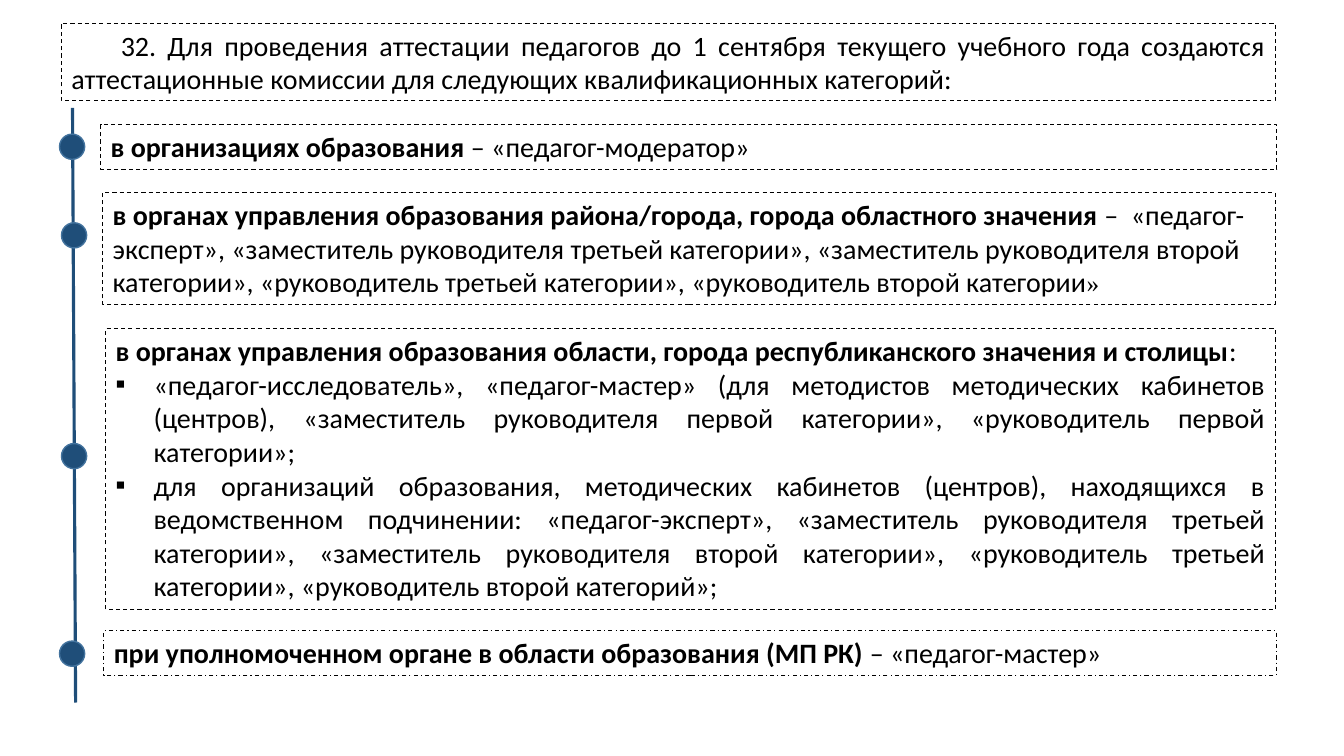
from lxml import etree
from pptx import Presentation
from pptx.dml.color import RGBColor
from pptx.enum.dml import MSO_LINE_DASH_STYLE as DASH
from pptx.enum.shapes import MSO_CONNECTOR, MSO_SHAPE
from pptx.enum.text import MSO_AUTO_SIZE, PP_ALIGN
from pptx.oxml.ns import qn
from pptx.util import Pt


def color(hex_string):
    return RGBColor.from_string(hex_string)


def add_box(left, top, width, height, paragraphs, dash=DASH.DASH):
    """Outlined text box; each paragraph is a list of (text, bold) runs."""
    sp = slide.shapes.add_textbox(Pt(left), Pt(top), Pt(width), Pt(height))
    sp.line.color.rgb = color("000000")
    sp.line.width = Pt(0.75)
    sp.line.dash_style = dash
    tf = sp.text_frame
    tf.word_wrap = True
    tf.auto_size = MSO_AUTO_SIZE.SHAPE_TO_FIT_TEXT
    for i, runs in enumerate(paragraphs):
        p = tf.add_paragraph() if i else tf.paragraphs[0]
        for text, bold in runs:
            r = p.add_run()
            r.text = text
            r.font.name = "Calibri"
            r.font.size = Pt(20)
            r.font.bold = bold
            r.font.color.rgb = color("000000")
    return tf


prs = Presentation()
prs.slide_width, prs.slide_height = Pt(960), Pt(540)
slide = prs.slides.add_slide(prs.slide_layouts[6])

# Introduction
tf = add_box(43.9, 16.6, 866.9, 55.4, [[(
    "32. Для проведения аттестации педагогов до 1 сентября текущего учебного года "
    "создаются аттестационные комиссии для следующих квалификационных категорий:", False)]])
p = tf.paragraphs[0]
p.alignment = PP_ALIGN.JUSTIFY
p._p.get_or_add_pPr().set("indent", str(Pt(35.3)))

# Timeline with a dot for each level
line = slide.shapes.add_connector(MSO_CONNECTOR.STRAIGHT, Pt(51.8), Pt(77), Pt(54), Pt(501.8))
line.line.color.rgb = color("1F4E79")
line.line.width = Pt(2.25)
etree.SubElement(line._element.spPr, qn("a:effectLst"))

for left, top in [(42.5, 95.8), (43.9, 159.1), (43.9, 316.8), (42.5, 457.9)]:
    dot = slide.shapes.add_shape(MSO_SHAPE.OVAL, Pt(left), Pt(top), Pt(18), Pt(18))
    dot.shadow.inherit = False
    dot.fill.solid()
    dot.fill.fore_color.rgb = color("1F4E79")
    dot.line.color.rgb = color("43739E")
    dot.line.width = Pt(1)

# Education organisations
add_box(72, 89.3, 840.2, 31.7, [
    [("в организациях образования ", True), ("– «педагог-модератор»", False)]])

# District and city authorities
tf = add_box(73.4, 137.5, 837.4, 79.9, [[
    ("в органах управления образования района/города, города областного значения ", True),
    ("–  «педагог-эксперт», «заместитель руководителя третьей категории», "
     "«заместитель руководителя второй категории», «руководитель третьей категории», "
     "«руководитель второй категории", False),
    ("»", False)]])
closing_quote = tf.paragraphs[0].runs[-1]
closing_quote.font.name = "Times New Roman"
closing_quote.font.size = Pt(18)

# Regional authorities, with bullets
tf = add_box(75.6, 234.7, 835.2, 200.9, [
    [("в органах управления образования области, города республиканского значения и столицы", True),
     (":", False)],
    [("«педагог-исследователь», «педагог-мастер» (для методистов методических кабинетов "
      "(центров), «заместитель руководителя первой категории», «руководитель первой "
      "категории»;", False)],
    [("для организаций образования, методических кабинетов (центров), находящихся в "
      "ведомственном подчинении: «педагог-эксперт», «заместитель руководителя третьей "
      "категории», «заместитель руководителя второй категории», «руководитель третьей "
      "категории», «руководитель второй категорий»;", False)]])
for p in tf.paragraphs[1:]:
    p.alignment = PP_ALIGN.JUSTIFY
    pPr = p._p.get_or_add_pPr()
    pPr.set("marL", str(Pt(27)))
    pPr.set("indent", str(-Pt(27)))
    etree.SubElement(pPr, qn("a:buFont")).set("typeface", "Calibri")
    etree.SubElement(pPr, qn("a:buChar")).set("char", "▪")

# Authorised body
add_box(74.2, 450.7, 837.4, 31.7, [
    [("при уполномоченном органе в области образования (МП РК) ", True),
     ("– «педагог-мастер»", False)]], DASH.DASH_DOT)

prs.save("out.pptx")
